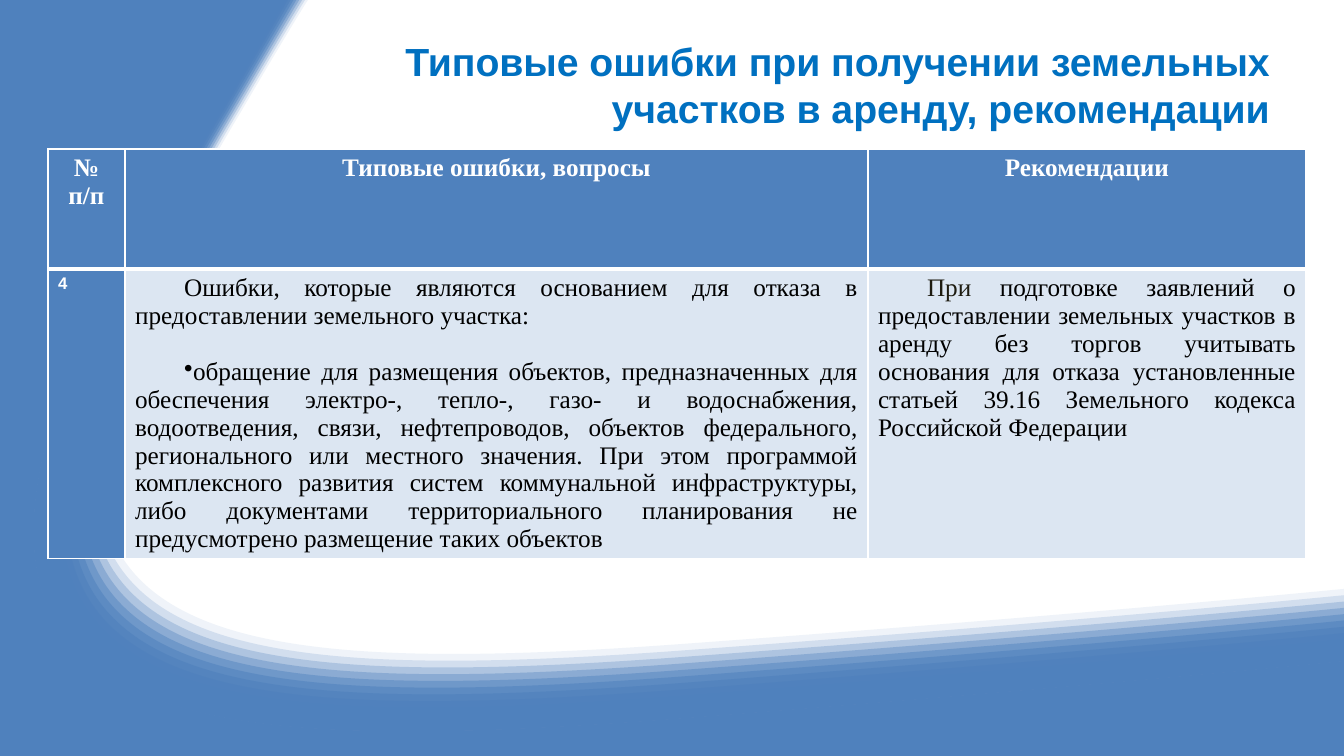
from dataclasses import dataclass

from lxml.etree import SubElement
from pptx import Presentation
from pptx.dml.color import RGBColor
from pptx.enum.text import MSO_ANCHOR, MSO_AUTO_SIZE, PP_ALIGN
from pptx.oxml.ns import qn
from pptx.util import Emu, Pt

PX = 914400 / 100.8
SLIDE_WIDTH, SLIDE_HEIGHT = 1344, 756


def px(length):
    return Emu(round(length * PX))


@dataclass(frozen=True)
class Theme:
    blue: str = "4F81BD"
    title_blue: str = "0070C0"
    pale: str = "DCE6F2"
    white: str = "FFFFFF"
    black: str = "000000"
    olive: str = "1E1C11"
    sans: str = "Arial"
    serif: str = "Times New Roman"
    title_size: int = 28
    body_size: int = 18
    number_size: int = 12
    blank_line: int = 20
    thin_border: int = 1
    thick_border: int = 3


THEME = Theme()

# Chains of three Bézier curves from the top edge to the right edge.
EDGE = [(267, 0), (267, 0), (242, 41), (198, 116), (-163, 718),
        (107, 761), (660, 720), (1084, 687), (1344, 661), (1344, 661)]
OUTER = [(308, 0), (307, 1), (283, 40), (242, 110), (-74, 637),
         (162, 683), (696, 643), (1094, 614), (1342, 589), (1344, 589)]
INNER = [(279, 0), (273, 11), (250, 52), (213, 115), (-143, 709),
         (123, 751), (669, 710), (1056, 680), (1309, 656), (1344, 652)]
BAND_COUNT = 11

TITLE = "Типовые ошибки при получении земельных участков в аренду, рекомендации"
HEADINGS = ["№ п/п", "Типовые ошибки, вопросы", "Рекомендации"]
NUMBER = "4"
MISTAKE = ("Ошибки, которые являются основанием для отказа в предоставлении "
           "земельного участка:")
CASE = ("обращение для размещения объектов, предназначенных для обеспечения "
        "электро-, тепло-, газо- и водоснабжения, водоотведения, связи, "
        "нефтепроводов, объектов федерального, регионального или местного "
        "значения. При этом программой комплексного развития систем "
        "коммунальной инфраструктуры, либо документами территориального "
        "планирования не предусмотрено размещение таких объектов")
ADVICE_START = "При "
ADVICE = ("подготовке заявлений о предоставлении земельных участков в аренду "
          "без торгов учитывать основания для отказа установленные статьей "
          "39.16 Земельного кодекса Российской Федерации")


def rgb(color):
    return RGBColor.from_string(color)


def blend(start, end, share):
    return [tuple(a + (b - a) * share for a, b in zip(p, q)) for p, q in zip(start, end)]


def add_segment(outline, kind, points):
    segment = SubElement(outline, qn(f"a:{kind}"))
    for x, y in points:
        SubElement(segment, qn("a:pt"), x=str(px(x)), y=str(px(y)))


def add_curves(outline, chain):
    for first in range(1, len(chain), 3):
        add_segment(outline, "cubicBezTo", chain[first:first + 3])


def add_area(page, box, opacity):
    """Add a blue freeform that fills the box; return its emptied outline."""
    left, top, width, height = map(px, box)
    right, bottom = left + width, top + height
    builder = page.shapes.build_freeform(left, top, scale=1.0)
    builder.add_line_segments([(right, top), (right, bottom), (left, bottom)])
    area = builder.convert_to_shape()
    area.shadow.inherit = False
    area.line.fill.background()
    area.fill.solid()
    area.fill.fore_color.rgb = rgb(THEME.blue)
    if opacity < 1:
        color = area._element.spPr.find(qn("a:solidFill"))[0]
        SubElement(color, qn("a:alpha"), val=str(round(opacity * 100000)))
    outline = next(area._element.iter(qn("a:path")))
    for segment in list(outline):
        outline.remove(segment)
    return outline


def add_backdrop(page, box):
    base = add_area(page, box, 1)
    add_segment(base, "moveTo", EDGE[:1])
    add_curves(base, EDGE)
    for corner in ((SLIDE_WIDTH, SLIDE_HEIGHT), (0, SLIDE_HEIGHT), (0, 0)):
        add_segment(base, "lnTo", [corner])
    SubElement(base, qn("a:close"))

    for band in range(BAND_COUNT):
        crest = blend(OUTER, INNER, band / (BAND_COUNT - 1))
        outline = add_area(page, box, (band + 1) / BAND_COUNT)
        add_segment(outline, "moveTo", crest[:1])
        add_curves(outline, crest)
        add_segment(outline, "lnTo", EDGE[-1:])
        add_curves(outline, EDGE[::-1])
        SubElement(outline, qn("a:close"))


def set_font(font, color, size=THEME.body_size, name=THEME.serif, bold=False):
    font.name, font.size, font.bold = name, Pt(size), bold
    font.color.rgb = rgb(color)


def place_title(page, box):
    title = page.shapes.title
    page.shapes._spTree.append(title._element)
    title.left, title.top, title.width, title.height = map(px, box)
    frame = title.text_frame
    frame.text = TITLE
    frame.word_wrap = True
    frame.auto_size = MSO_AUTO_SIZE.NONE
    frame.vertical_anchor = MSO_ANCHOR.MIDDLE
    para = frame.paragraphs[0]
    para.alignment = PP_ALIGN.RIGHT
    set_font(para.font, THEME.title_blue, THEME.title_size, THEME.sans, bold=True)


def style_cell(cell, fill, top, bottom):
    cell.fill.solid()
    cell.fill.fore_color.rgb = rgb(fill)
    properties = cell._tc.get_or_add_tcPr()
    sides = {"lnL": THEME.thin_border, "lnR": THEME.thin_border, "lnT": top, "lnB": bottom}
    for position, (side, width) in enumerate(sides.items()):
        line = SubElement(properties, qn(f"a:{side}"), w=str(Pt(width)))
        SubElement(SubElement(line, qn("a:solidFill")), qn("a:srgbClr"), val=THEME.white)
        properties.insert(position, line)


def format_body(para, bullet=False):
    para.alignment = PP_ALIGN.JUSTIFY
    set_font(para.font, THEME.black)
    properties = para._p.get_or_add_pPr()
    properties.set("marL", "0")
    properties.set("indent", str(px(49)))
    if bullet:
        para.space_before = Pt(THEME.blank_line)
        mark = SubElement(properties, qn("a:buChar"), char="•")
        properties.find(qn("a:defRPr")).addprevious(mark)


def add_mistakes_table(page, box):
    left, top, width, height = box
    number_width, advice_width, heading_height = 77, 438, 120
    table = page.shapes.add_table(2, 3, *map(px, box)).table
    table.horz_banding = False
    widths = (number_width, width - number_width - advice_width, advice_width)
    for column, column_width in zip(table.columns, widths):
        column.width = px(column_width)
    for row, row_height in zip(table.rows, (heading_height, height - heading_height)):
        row.height = px(row_height)

    for index, heading in enumerate(HEADINGS):
        cell = table.cell(0, index)
        cell.text = heading
        style_cell(cell, THEME.blue, THEME.thin_border, THEME.thick_border)
        para = cell.text_frame.paragraphs[0]
        para.alignment = PP_ALIGN.CENTER
        set_font(para.font, THEME.white, bold=True)
        style_cell(table.cell(1, index), THEME.pale if index else THEME.blue,
                   THEME.thick_border, THEME.thin_border)

    number, mistake, advice = table.rows[1].cells
    number.text = NUMBER
    set_font(number.text_frame.paragraphs[0].font, THEME.white,
             THEME.number_size, THEME.sans, bold=True)

    mistake.text = f"{MISTAKE}\n{CASE}"
    for index, para in enumerate(mistake.text_frame.paragraphs):
        format_body(para, bullet=index > 0)

    para = advice.text_frame.paragraphs[0]
    format_body(para)
    for text, color in ((ADVICE_START, THEME.olive), (ADVICE, THEME.black)):
        span = para.add_run()
        span.text = text
        span.font.color.rgb = rgb(color)


def main():
    deck = Presentation()
    deck.slide_width, deck.slide_height = px(SLIDE_WIDTH), px(SLIDE_HEIGHT)
    page = deck.slides.add_slide(deck.slide_layouts.get_by_name("Title Only"))
    add_backdrop(page, (0, 0, SLIDE_WIDTH, SLIDE_HEIGHT))
    place_title(page, (248, 21, 1032, 126))
    add_mistakes_table(page, (48, 149, 1258, 409))
    deck.save("out.pptx")


if __name__ == "__main__":
    main()
